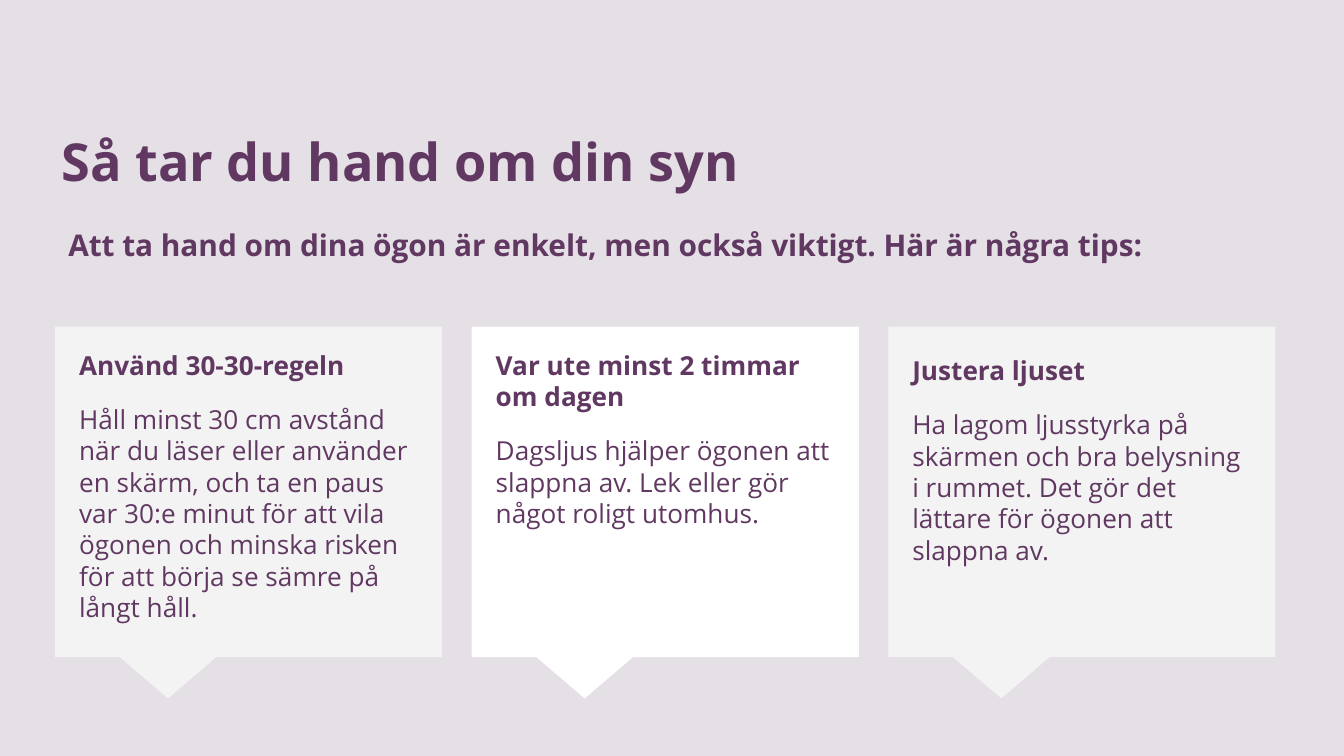
from dataclasses import dataclass

from pptx import Presentation
from pptx.dml.color import RGBColor
from pptx.enum.shapes import MSO_SHAPE
from pptx.enum.text import MSO_ANCHOR, PP_ALIGN
from pptx.util import Inches, Pt

CALLOUT = MSO_SHAPE.RECTANGULAR_CALLOUT
TOP = MSO_ANCHOR.TOP
MIDDLE = MSO_ANCHOR.MIDDLE
LEFT = PP_ALIGN.LEFT


@dataclass(frozen=True)
class Theme:
    font: str = "Open Sans"
    background: RGBColor = RGBColor(0xE5, 0xDF, 0xE6)
    ink: RGBColor = RGBColor(0x60, 0x38, 0x61)
    grey: RGBColor = RGBColor(0xF3, 0xF3, 0xF3)
    white: RGBColor = RGBColor(0xFF, 0xFF, 0xFF)
    title_size: int = 28
    intro_size: int = 16
    tip_size: int = 14


THEME = Theme()

CARD_LEFT, CARD_TOP = 0.41, 2.43
CARD_WIDTH, CARD_HEIGHT, CARD_GAP = 2.88, 2.46, 0.22
TIP_INDENT, TIP_HEIGHT = 0.08, 2.19

TIPS = [
    (THEME.grey, 2.5, 2.71, "Använd 30-30-regeln",
     "Håll minst 30 cm avstånd när du läser eller använder en skärm, och ta en paus "
     "var 30:e minut för att vila ögonen och minska risken för att börja se sämre på långt håll."),
    (THEME.white, 2.5, 2.71, "Var ute minst 2 timmar om dagen",
     "Dagsljus hjälper ögonen att slappna av. Lek eller gör något roligt utomhus."),
    (THEME.grey, 2.54, 2.66, "Justera ljuset",
     "Ha lagom ljusstyrka på skärmen och bra belysning i rummet. "
     "Det gör det lättare för ögonen att slappna av."),
]


def style_paragraph(para, size, bold):
    para.alignment = LEFT
    for span in para.runs:
        span.font.name = THEME.font
        span.font.size = Pt(size)
        span.font.bold = bold
        span.font.color.rgb = THEME.ink


def add_text(page, left, top, width, height, text, size, anchor=TOP):
    box = page.shapes.add_textbox(Inches(left), Inches(top), Inches(width), Inches(height))
    frame = box.text_frame
    frame.word_wrap = True
    frame.vertical_anchor = anchor
    frame.margin_left = frame.margin_right = Inches(0.1)
    frame.margin_top = frame.margin_bottom = Inches(0.1)
    frame.text = text
    style_paragraph(frame.paragraphs[0], size, True)
    return frame


def add_card(page, left, fill):
    card = page.shapes.add_shape(
        CALLOUT, Inches(left), Inches(CARD_TOP), Inches(CARD_WIDTH), Inches(CARD_HEIGHT))
    card.adjustments[0] = -0.208
    card.adjustments[1] = 0.625
    card.shadow.inherit = False
    card.fill.solid()
    card.fill.fore_color.rgb = fill
    card.line.fill.background()


def add_tip(page, left, top, width, heading, advice):
    frame = add_text(page, left, top, width, TIP_HEIGHT, heading, THEME.tip_size)
    para = frame.add_paragraph()
    para.text = advice
    para.space_before = para.space_after = Pt(12)
    style_paragraph(para, THEME.tip_size, False)


def main():
    deck = Presentation()
    deck.slide_width = Inches(10)
    deck.slide_height = deck.slide_width * 9 // 16
    page = deck.slides.add_slide(deck.slide_layouts[6])
    page.background.fill.solid()
    page.background.fill.fore_color.rgb = THEME.background

    for index, (fill, top, width, heading, advice) in enumerate(TIPS):
        left = CARD_LEFT + index * (CARD_WIDTH + CARD_GAP)
        add_card(page, left, fill)
        add_tip(page, left + TIP_INDENT, top, width, heading, advice)

    add_text(page, 0.36, 0.86, 9.18, 0.8, "Så tar du hand om din syn", THEME.title_size)
    add_text(page, 0.41, 1.5, 8.23, 0.64,
             "Att ta hand om dina ögon är enkelt, men också viktigt. Här är några tips:",
             THEME.intro_size, MIDDLE)
    deck.save("out.pptx")


if __name__ == "__main__":
    main()
